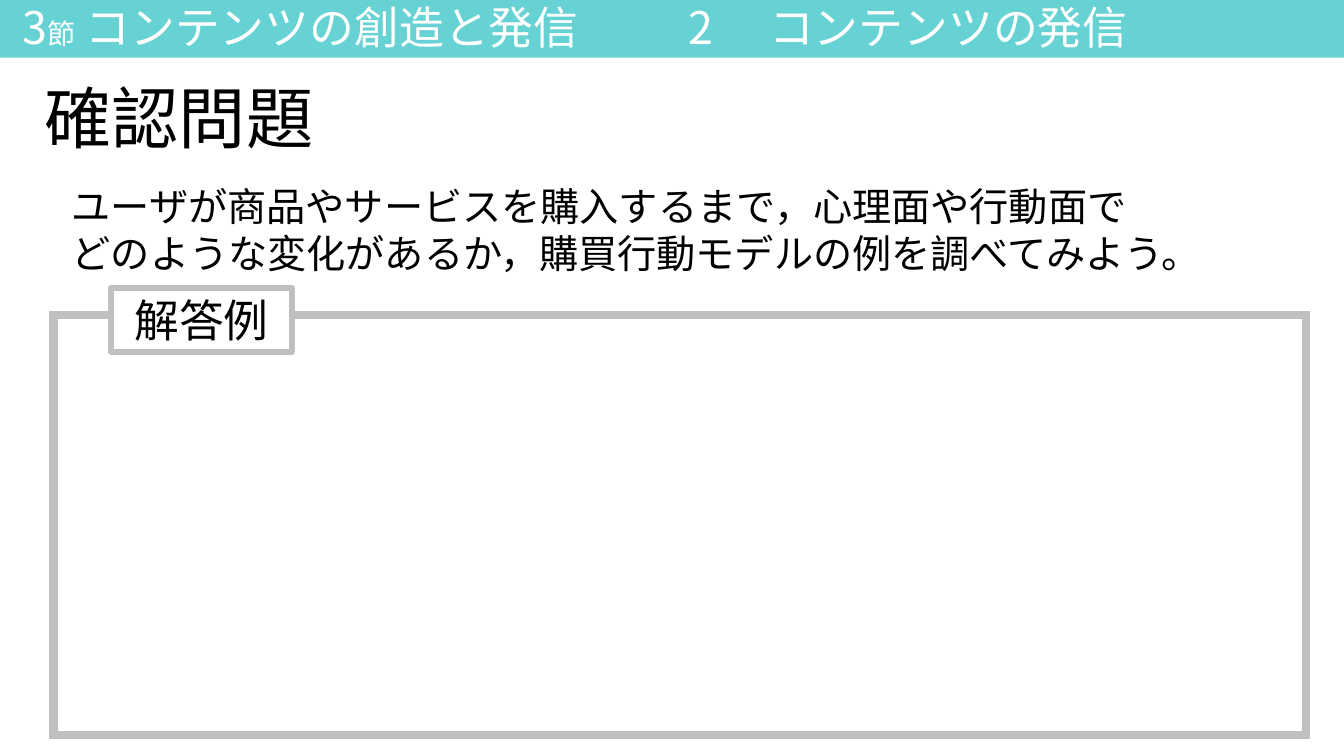
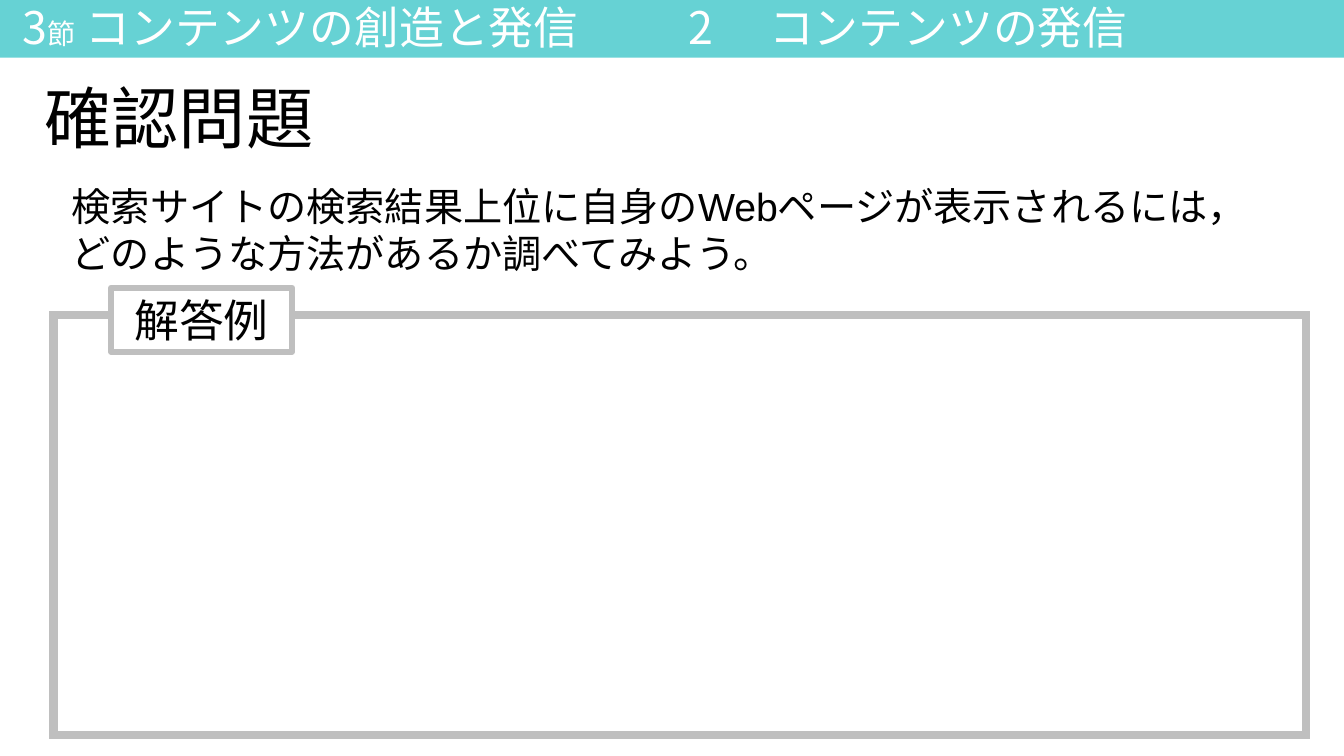
from dataclasses import dataclass

from lxml.etree import SubElement
from pptx import Presentation
from pptx.dml.color import RGBColor
from pptx.enum.shapes import MSO_SHAPE
from pptx.enum.text import MSO_ANCHOR, PP_ALIGN
from pptx.oxml.ns import qn
from pptx.util import Pt

PX = 9525
WIDTH, HEIGHT = 1280, 720


@dataclass(frozen=True)
class Theme:
    """Colours, fonts and type sizes shared by the slides."""

    teal: RGBColor = RGBColor(0x66, 0xD2, 0xD4)
    grey: RGBColor = RGBColor(0xBF, 0xBF, 0xBF)
    white: RGBColor = RGBColor(0xFF, 0xFF, 0xFF)
    black: RGBColor = RGBColor(0x00, 0x00, 0x00)
    heading_font: str = "Noto Sans CJK JP"
    body_font: str = "Arial"
    title: int = 48
    heading: int = 32
    small: int = 20
    body: int = 28


THEME = Theme()
QUESTIONS = [
    "ユーザが商品やサービスを購入するまで，心理面や行動面で\n"
    "どのような変化があるか，購買行動モデルの例を調べてみよう。",
    "検索サイトの検索結果上位に自身のWebページが表示されるには，\n"
    "どのような方法があるか調べてみよう。",
]


def emu(*lengths):
    """Turn px lengths into EMU."""
    return [n * PX for n in lengths]


def add_rect(s, box, fill, line=None, weight=0, miter=False):
    """Draw a plain rectangle with an optional outline."""
    sp = s.shapes.add_shape(MSO_SHAPE.RECTANGLE, *emu(*box))
    sp.shadow.inherit = False
    sp.fill.solid()
    sp.fill.fore_color.rgb = fill
    if line is None:
        sp.line.fill.background()
    else:
        sp.line.color.rgb = line
        sp.line.width = Pt(weight)
        if miter:
            SubElement(sp.line._get_or_add_ln(), qn("a:miter"), lim="800000")
    return sp


def add_text(s, text, box, size, font=THEME.heading_font, color=THEME.black,
             align=PP_ALIGN.LEFT, anchor=MSO_ANCHOR.MIDDLE, spacing=None,
             tabs=(), sizes=None):
    """Write one paragraph; sizes maps a piece of text to its own size."""
    sp = s.shapes.add_textbox(*emu(*box))
    tf = sp.text_frame
    tf.word_wrap = True
    tf.vertical_anchor = anchor
    p = tf.paragraphs[0]
    p.alignment = align
    p.line_spacing = spacing
    if tabs:
        stops = SubElement(p._p.get_or_add_pPr(), qn("a:tabLst"))
        for x in emu(*tabs):
            SubElement(stops, qn("a:tab"), pos=str(x), algn="l")
    for i, line in enumerate(text.split("\n")):
        if i:
            p.add_line_break()
        pieces = [line]
        for key in sizes or {}:
            before, found, after = line.partition(key)
            pieces = [before, found, after]
        for piece in filter(None, pieces):
            r = p.add_run()
            r.text = piece
            r.font.size = Pt((sizes or {}).get(piece, size))
            r.font.name = font
            r.font.color.rgb = color
            SubElement(r.font._element, qn("a:ea"), typeface=font)
    return sp


def add_header(s, box):
    """Draw the section band and its heading."""
    x, y, w, h = box
    add_rect(s, box, THEME.teal)
    add_text(s, "3節 コンテンツの創造と発信\t2\tコンテンツの発信",
             (x + 12, y + 6, w - 22, h - 10), THEME.heading,
             color=THEME.white, spacing=0.9, tabs=(634, 711),
             sizes={"節": THEME.small})


def add_answer(s, box):
    """Draw the answer frame with its label across the top edge."""
    x, y, w, h = box
    add_rect(s, box, THEME.white, THEME.grey, 6, miter=True)
    label = (x + 55, y - 26, 172, 61)
    add_rect(s, label, THEME.white, THEME.grey, 4.5)
    add_text(s, "解答例", label, THEME.heading, align=PP_ALIGN.CENTER)


def add_question_slide(prs, question):
    """Build one review question slide."""
    s = prs.slides.add_slide(prs.slide_layouts[6])
    add_header(s, (0, 0, WIDTH, 55))
    add_text(s, "確認問題", (33, 68, 1214, 95), THEME.title, spacing=0.9)
    add_text(s, question, (59, 169, 1221, 176), THEME.body,
             font=THEME.body_font, anchor=MSO_ANCHOR.TOP)
    add_answer(s, (51, 300, 1193, 400))


def main():
    """Build and save the presentation."""
    prs = Presentation()
    prs.slide_width, prs.slide_height = emu(WIDTH, HEIGHT)
    for question in QUESTIONS:
        add_question_slide(prs, question)
    prs.save("out.pptx")


if __name__ == "__main__":
    main()
